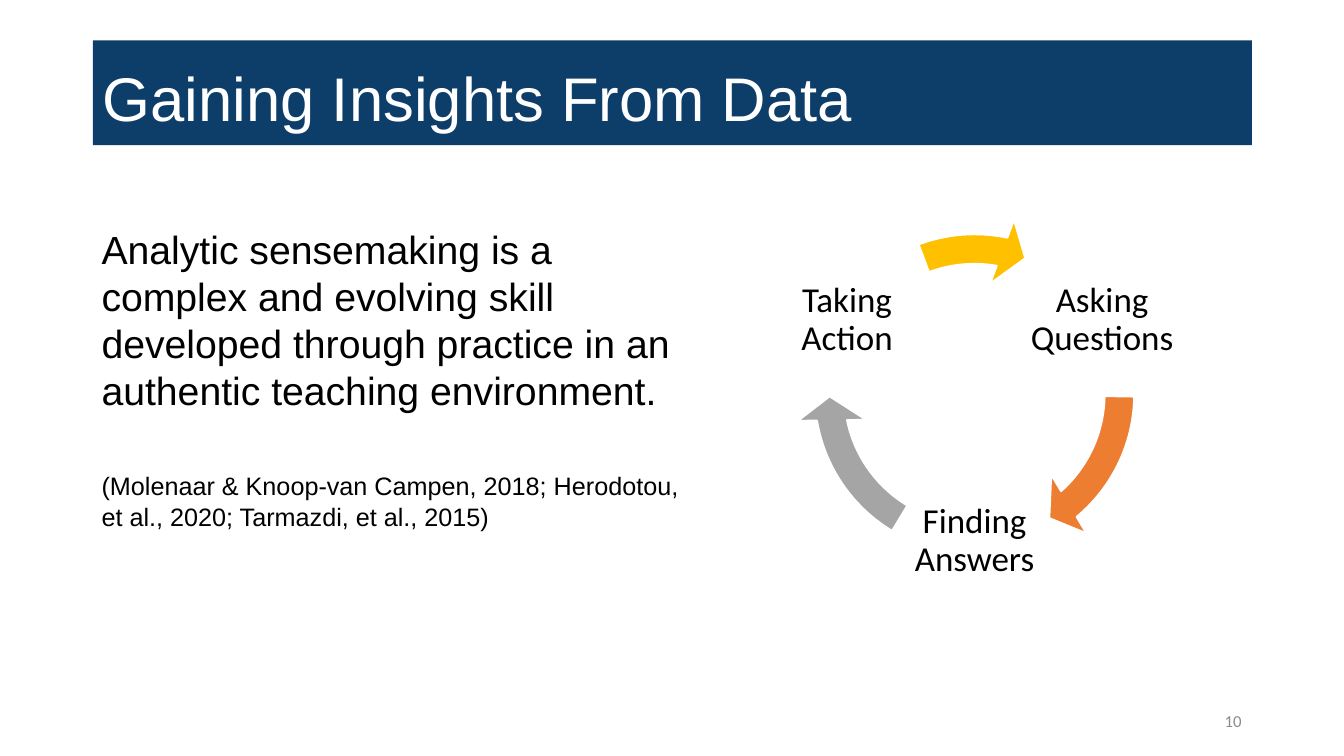
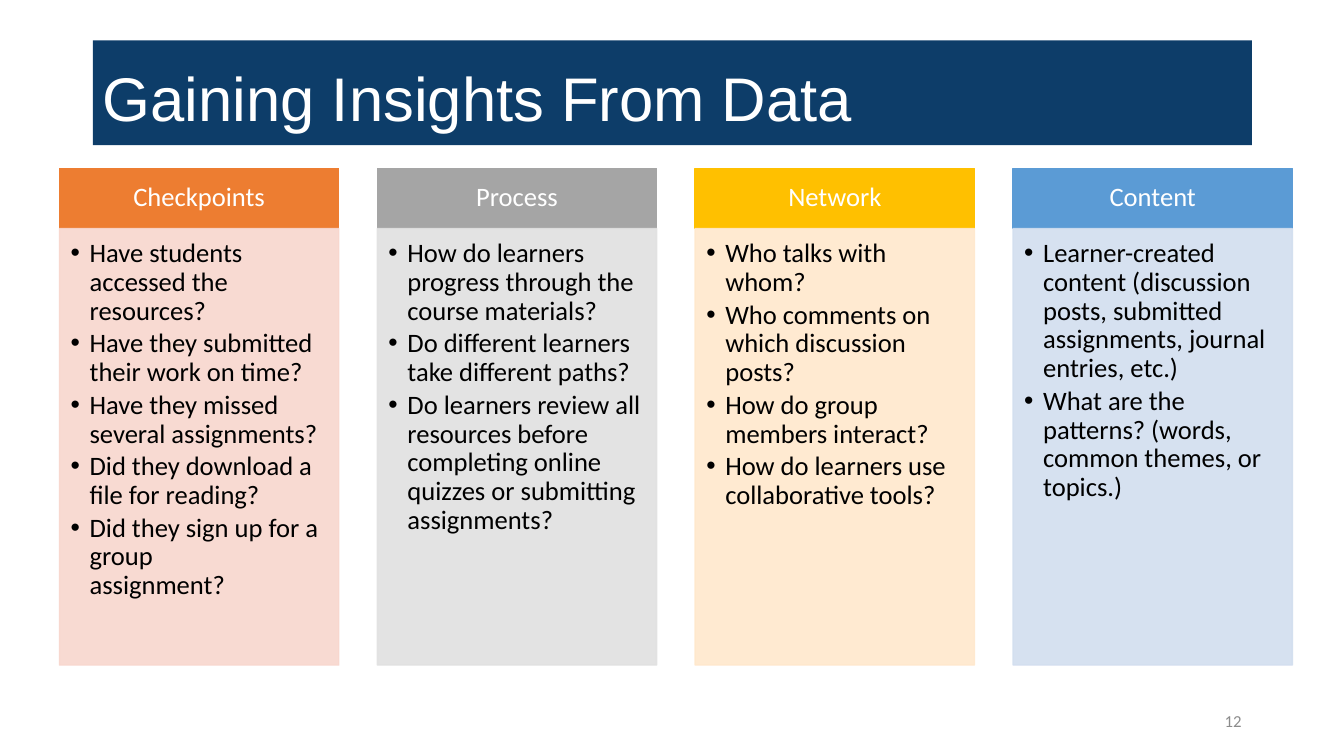
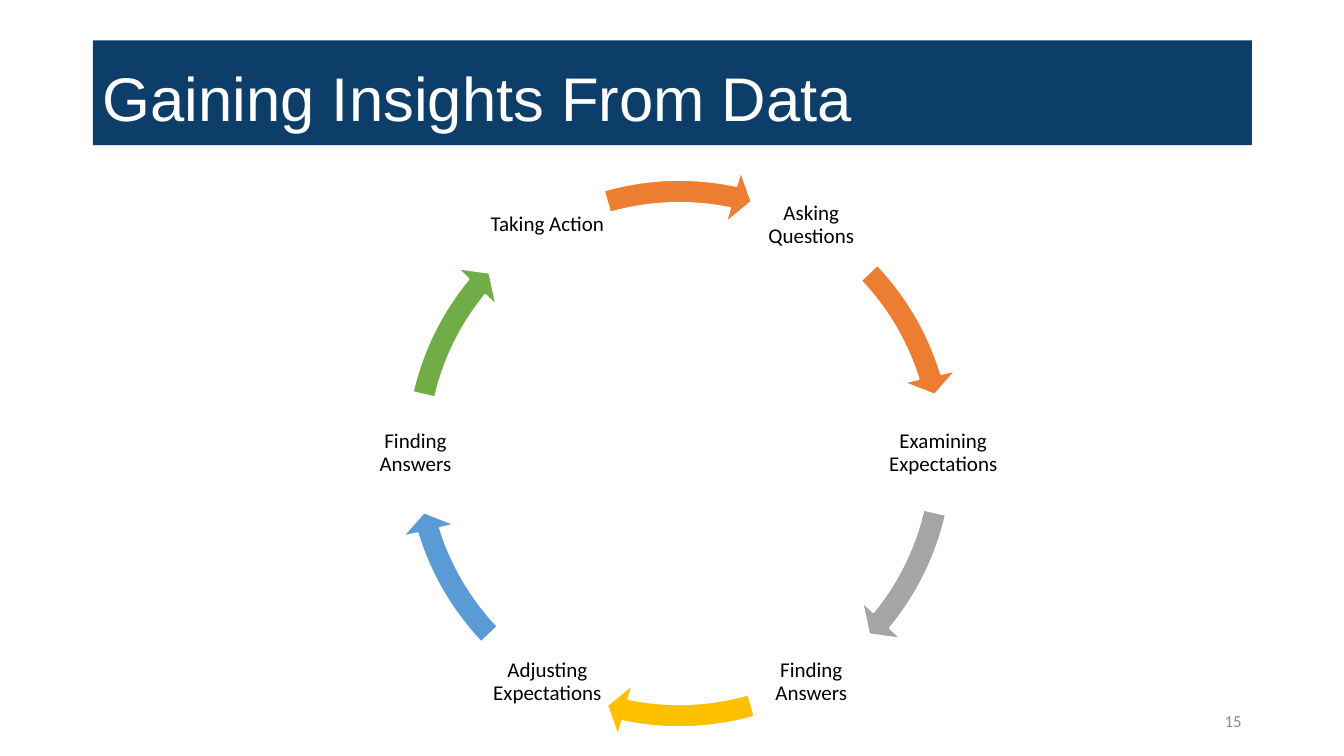
"""Builds three slides on gaining insights from data."""
from math import cos, radians, sin

from lxml import etree
from pptx import Presentation
from pptx.dml.color import RGBColor
from pptx.enum.shapes import MSO_SHAPE as Shape
from pptx.enum.text import MSO_ANCHOR as Anchor, MSO_AUTO_SIZE as AutoSize, PP_ALIGN as Align
from pptx.oxml.ns import qn
from pptx.util import Cm, Pt

NAVY = RGBColor(0x0D, 0x3D, 0x69)
WHITE = RGBColor(0xFF, 0xFF, 0xFF)
BLACK = RGBColor(0x00, 0x00, 0x00)
MUTED = RGBColor(0x8C, 0x8C, 0x8C)
ORANGE = RGBColor(0xED, 0x7D, 0x31)
GRAY = RGBColor(0xA5, 0xA5, 0xA5)
GOLD = RGBColor(0xFF, 0xC0, 0x00)
BLUE = RGBColor(0x5B, 0x9B, 0xD5)
GREEN = RGBColor(0x70, 0xAD, 0x47)
PALE_ORANGE = RGBColor(0xF8, 0xD7, 0xCE)
PALE_GRAY = RGBColor(0xE1, 0xE1, 0xE1)
PALE_GOLD = RGBColor(0xFF, 0xE8, 0xCC)
PALE_BLUE = RGBColor(0xD2, 0xDE, 0xEF)


def write(frame, text, size, color, align=Align.LEFT, font="Calibri",
          anchor=Anchor.MIDDLE, spacing=None, insets=(0.25, 0.13, 0.25, 0.13)):
    frame.text = text
    frame.word_wrap = True
    frame.auto_size = AutoSize.NONE
    frame.vertical_anchor = anchor
    (frame.margin_left, frame.margin_top,
     frame.margin_right, frame.margin_bottom) = [Cm(inset) for inset in insets]
    for paragraph in frame.paragraphs:
        paragraph.alignment = align
        paragraph.line_spacing = spacing
        for run in paragraph.runs:
            run.font.name = font
            run.font.size = Pt(size)
            run.font.color.rgb = color


def draw_cycle(slide, center, radius, ring_size, label_size, font_size, inset, ring, stages):
    center_x, center_y = center
    thickness, head_angle, head_width = ring
    for text, angle, color, arrow_end, arrow_start in stages:
        label = slide.shapes.add_textbox(
            Cm(center_x + radius * cos(radians(angle)) - label_size / 2),
            Cm(center_y + radius * sin(radians(angle)) - label_size / 2),
            Cm(label_size), Cm(label_size))
        write(label.text_frame, text, font_size, BLACK, Align.CENTER,
              spacing=0.9, insets=[inset] * 4)
        arrow = slide.shapes.add_shape(
            Shape.CIRCULAR_ARROW, Cm(center_x - ring_size / 2), Cm(center_y - ring_size / 2),
            Cm(ring_size), Cm(ring_size))
        arrow.shadow.inherit = False
        arrow.fill.solid()
        arrow.fill.fore_color.rgb = color
        arrow.line.color.rgb = WHITE
        arrow.line.width = Pt(1.5)
        arrow.adjustments[0] = thickness
        for index, degrees in enumerate((head_angle, arrow_end, arrow_start), start=1):
            arrow.adjustments[index] = degrees * 0.6
        arrow.adjustments[4] = head_width


deck = Presentation()
deck.slide_width = Cm(33.87)
deck.slide_height = Cm(19.05)

slides = []
for page in ("10", "12", "15"):
    slide = deck.slides.add_slide(deck.slide_layouts[5])
    title = slide.shapes.title
    title.left, title.top, title.width, title.height = Cm(2.34), Cm(1.02), Cm(29.21), Cm(2.64)
    title.fill.solid()
    title.fill.fore_color.rgb = NAVY
    write(title.text_frame, "Gaining Insights From Data", 44, WHITE, font="Arial", spacing=1.1)
    page_number = slide.shapes.add_textbox(Cm(23.92), Cm(17.65), Cm(7.62), Cm(1.02))
    write(page_number.text_frame, page, 12, MUTED, Align.RIGHT)
    slides.append(slide)

sensemaking, questions, full_cycle = slides

statement = sensemaking.shapes.add_textbox(Cm(2.31), Cm(5.54), Cm(15.21), Cm(8.13))
write(statement.text_frame,
      "Analytic sensemaking is a complex and evolving skill developed through practice "
      "in an authentic teaching environment.\n"
      "(Molenaar & Knoop‐van Campen, 2018; Herodotou, et al., 2020; Tarmazdi, et al., 2015)",
      28, BLACK, font="Arial", anchor=Anchor.TOP)
citation = statement.text_frame.paragraphs[1]
citation.space_before = Pt(41)
citation.runs[0].font.size = Pt(18)

draw_cycle(sensemaking, (24.56, 9.93), 3.71, 9.04, 3.84, 25, 0.08, (0.083, 9.61, 0.096), [
    ("Asking Questions", -30, ORANGE, 49.36, 0.89),
    ("Finding Answers", 90, GRAY, 169.51, 121.03),
    ("Taking Action", 210, GOLD, 280.91, 249.48),
])

columns = [
    ("Checkpoints", ORANGE, PALE_ORANGE, [
        "Have students accessed the resources?",
        "Have they submitted their work on time?",
        "Have they missed several assignments?",
        "Did they download a file for reading?",
        "Did they sign up for a group\vassignment?",
    ]),
    ("Process", GRAY, PALE_GRAY, [
        "How do learners progress through the course materials?",
        "Do different learners take different paths?",
        "Do learners review all resources before completing online quizzes "
        "or submitting assignments?",
    ]),
    ("Network", GOLD, PALE_GOLD, [
        "Who talks with whom?",
        "Who comments on which discussion posts?",
        "How do group members interact?",
        "How do learners use collaborative tools?",
    ]),
    ("Content", BLUE, PALE_BLUE, [
        "Learner-created content (discussion posts, submitted assignments, "
        "journal entries, etc.)",
        "What are the patterns? (words, common themes, or topics.)",
    ]),
]
column_width, column_gap = 7.04, 0.97
for index, (heading, strong, pale, items) in enumerate(columns):
    left = Cm(1.5 + index * (column_width + column_gap))
    header = questions.shapes.add_shape(Shape.RECTANGLE, left, Cm(4.24), Cm(column_width), Cm(1.52))
    body = questions.shapes.add_shape(Shape.RECTANGLE, left, Cm(5.76), Cm(column_width), Cm(11))
    for panel, color in ((header, strong), (body, pale)):
        panel.shadow.inherit = False
        panel.fill.solid()
        panel.fill.fore_color.rgb = color
        panel.line.color.rgb = color
        panel.line.width = Pt(1)
    for tint in body.element.spPr.iter(qn("a:srgbClr")):
        etree.SubElement(tint, qn("a:alpha"), val="90000")
    write(header.text_frame, heading, 19, WHITE, Align.CENTER, spacing=0.9,
          insets=(0.38, 0.2, 0.38, 0.2))
    write(body.text_frame, "\n".join(items), 19, BLACK, anchor=Anchor.TOP, spacing=0.9,
          insets=(0.28, 0.28, 0.38, 0.43))
    for item in body.text_frame.paragraphs:
        item.space_after = Pt(2.85)
        properties = item._p.get_or_add_pPr()
        properties.set("marL", str(Cm(0.48)))
        properties.set("indent", str(-Cm(0.48)))
        etree.SubElement(properties, qn("a:buFont"), typeface="Arial")
        etree.SubElement(properties, qn("a:buChar"), char="•")

draw_cycle(full_cycle, (17.12, 11.43), 6.65, 14.58, 2.97, 15, 0.05, (0.04, 4.17, 0.047), [
    ("Asking Questions", -60, ORANGE, 342.89, 316.38),
    ("Examining Expectations", 0, GRAY, 39.45, 12.94),
    ("Finding Answers", 60, GOLD, 101.86, 73.98),
    ("Adjusting Expectations", 120, BLUE, 162.89, 136.38),
    ("Finding Answers", 180, GREEN, 219.45, 192.94),
    ("Taking Action", 240, ORANGE, 281.86, 253.98),
])

deck.save("out.pptx")
